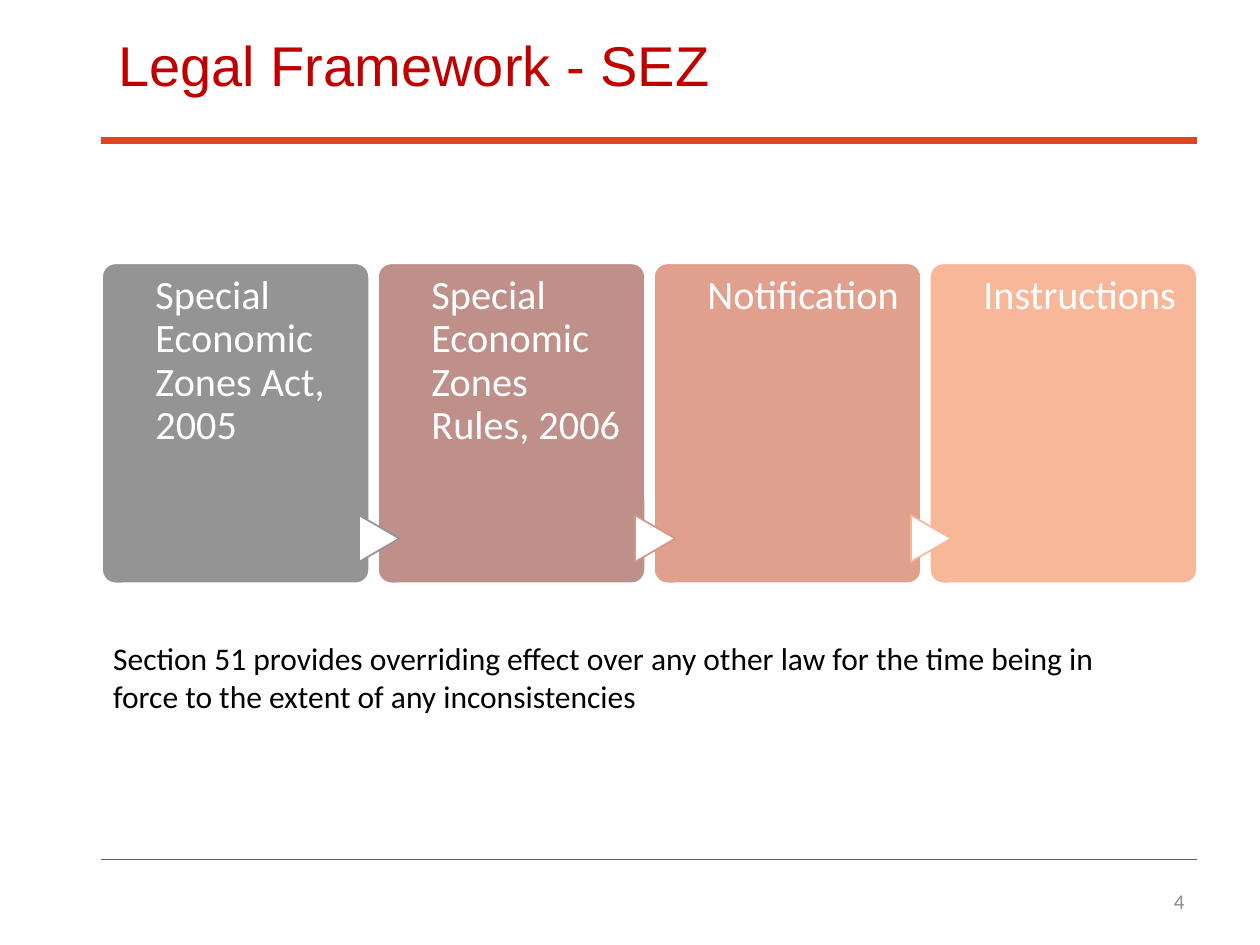
from pptx import Presentation
from pptx.dml.color import RGBColor
from pptx.enum.shapes import MSO_CONNECTOR, MSO_SHAPE
from pptx.enum.text import MSO_ANCHOR, PP_ALIGN
from pptx.util import Inches, Pt
from lxml import etree

STRAIGHT = MSO_CONNECTOR.STRAIGHT
ROUNDED = MSO_SHAPE.ROUNDED_RECTANGLE
TRIANGLE = MSO_SHAPE.FLOWCHART_EXTRACT
PARALLELOGRAM = MSO_SHAPE.PARALLELOGRAM
TOP, MIDDLE = MSO_ANCHOR.TOP, MSO_ANCHOR.MIDDLE
LEFT, RIGHT = PP_ALIGN.LEFT, PP_ALIGN.RIGHT

WHITE = RGBColor(0xFF, 0xFF, 0xFF)
BLACK = RGBColor(0x00, 0x00, 0x00)
TITLE_RED = RGBColor(0xC0, 0x00, 0x00)
BAR_ORANGE = RGBColor(0xDA, 0x47, 0x20)
RULE_GRAY = RGBColor(0x60, 0x60, 0x60)
NUMBER_GRAY = RGBColor(0x8C, 0x8C, 0x8C)
STEP_GRAY = RGBColor(0x94, 0x94, 0x94)
STEP_ROSE = RGBColor(0xBF, 0x90, 0x8A)
STEP_CORAL = RGBColor(0xE1, 0xA0, 0x8E)
STEP_PEACH = RGBColor(0xF8, 0xB7, 0x98)
ARROW_ROSE = RGBColor(0xD1, 0x98, 0x8B)

WIDTH, HEIGHT = 10, 7.5
MARGIN_LEFT, CONTENT_WIDTH = 0.8, 8.7
STEPS = [
    ("Special Economic Zones Act, 2005", STEP_GRAY, None),
    ("Special Economic Zones Rules, 2006", STEP_ROSE, STEP_GRAY),
    ("Notification", STEP_CORAL, ARROW_ROSE),
    ("Instructions", STEP_PEACH, STEP_PEACH),
]


def add_text(slide, box, text, size, color, font="Calibri", anchor=TOP,
             align=LEFT, spacing=1.0, insets=(0.1, 0.05, 0.1, 0.05)):
    frame = slide.shapes.add_textbox(*map(Inches, box)).text_frame
    frame.word_wrap = True
    frame.vertical_anchor = anchor
    (frame.margin_left, frame.margin_top,
     frame.margin_right, frame.margin_bottom) = map(Inches, insets)
    paragraph = frame.paragraphs[0]
    paragraph.text = text
    paragraph.alignment = align
    paragraph.line_spacing = spacing
    paragraph.font.name = font
    paragraph.font.size = Pt(size)
    paragraph.font.color.rgb = color


def add_block(slide, preset, box, fill, outline=None):
    block = slide.shapes.add_shape(preset, *map(Inches, box))
    block.shadow.inherit = False
    block.fill.solid()
    block.fill.fore_color.rgb = fill
    if outline is None:
        block.line.fill.background()
    else:
        block.line.color.rgb = outline
        block.line.width = Pt(1)
    return block


def add_header(slide, box):
    left, top, width, height = box
    add_text(slide, (left + 0.04, top, width - 0.04, 0.94), "Legal Framework - SEZ",
             32, TITLE_RED, font="Arial", anchor=MIDDLE, spacing=0.9)
    bar = add_block(slide, PARALLELOGRAM,
                    (left, top + height - 0.05, width, 0.05), BAR_ORANGE)
    bar.adjustments[0] = 0


def add_footer(slide, box):
    left, top, width, height = box
    rule = slide.shapes.add_connector(
        STRAIGHT, Inches(left), Inches(top), Inches(left + width), Inches(top))
    rule.line.color.rgb = RULE_GRAY
    rule.line.width = Pt(0.5)
    properties = rule.line._get_or_add_ln().getparent()
    namespace = properties.nsmap["a"]
    etree.SubElement(properties, f"{{{namespace}}}effectLst")
    number_width = 2.25
    add_text(slide, (left + width - number_width, top + 0.13, number_width, height - 0.13),
             "4", 12, NUMBER_GRAY, anchor=MIDDLE, align=RIGHT)


def add_process(slide, box):
    left, top, width, height = box
    card_width = 2.12
    pitch = (width - card_width) / (len(STEPS) - 1)
    arrow_width, arrow_height = 0.37, 0.32
    arrow_top = top + 0.86 * height - arrow_height / 2
    for index, (label, fill, arrow_color) in enumerate(STEPS):
        card_left = left + index * pitch
        card = add_block(slide, ROUNDED, (card_left, top, card_width, height), fill, WHITE)
        card.adjustments[0] = 0.05
        if arrow_color is not None:
            arrow = add_block(
                slide, TRIANGLE,
                (card_left - arrow_width / 2 + 0.01, arrow_top, arrow_width, arrow_height),
                WHITE, arrow_color)
            arrow.rotation = 90
        add_text(slide, (card_left + 0.2 * card_width, top, 0.75 * card_width, height),
                 label, 23, WHITE, spacing=0.9, insets=(0, 0.09, 0, 0))


def add_note(slide, box):
    add_text(slide, box,
             "Section 51 provides overriding effect over any other law for the time "
             "being in force to the extent of any inconsistencies", 18, BLACK)


def main():
    presentation = Presentation()
    presentation.slide_width = Inches(WIDTH)
    presentation.slide_height = Inches(HEIGHT)
    slide = presentation.slides.add_slide(presentation.slide_layouts[6])
    add_footer(slide, (MARGIN_LEFT, 6.82, CONTENT_WIDTH, 0.53))
    add_header(slide, (MARGIN_LEFT, 0.07, CONTENT_WIDTH, 1.07))
    add_process(slide, (MARGIN_LEFT + 0.01, 2.09, CONTENT_WIDTH - 0.01, 2.54))
    add_note(slide, (MARGIN_LEFT, 5.02, 0.93 * CONTENT_WIDTH, 0.71))
    presentation.save("out.pptx")


if __name__ == "__main__":
    main()
